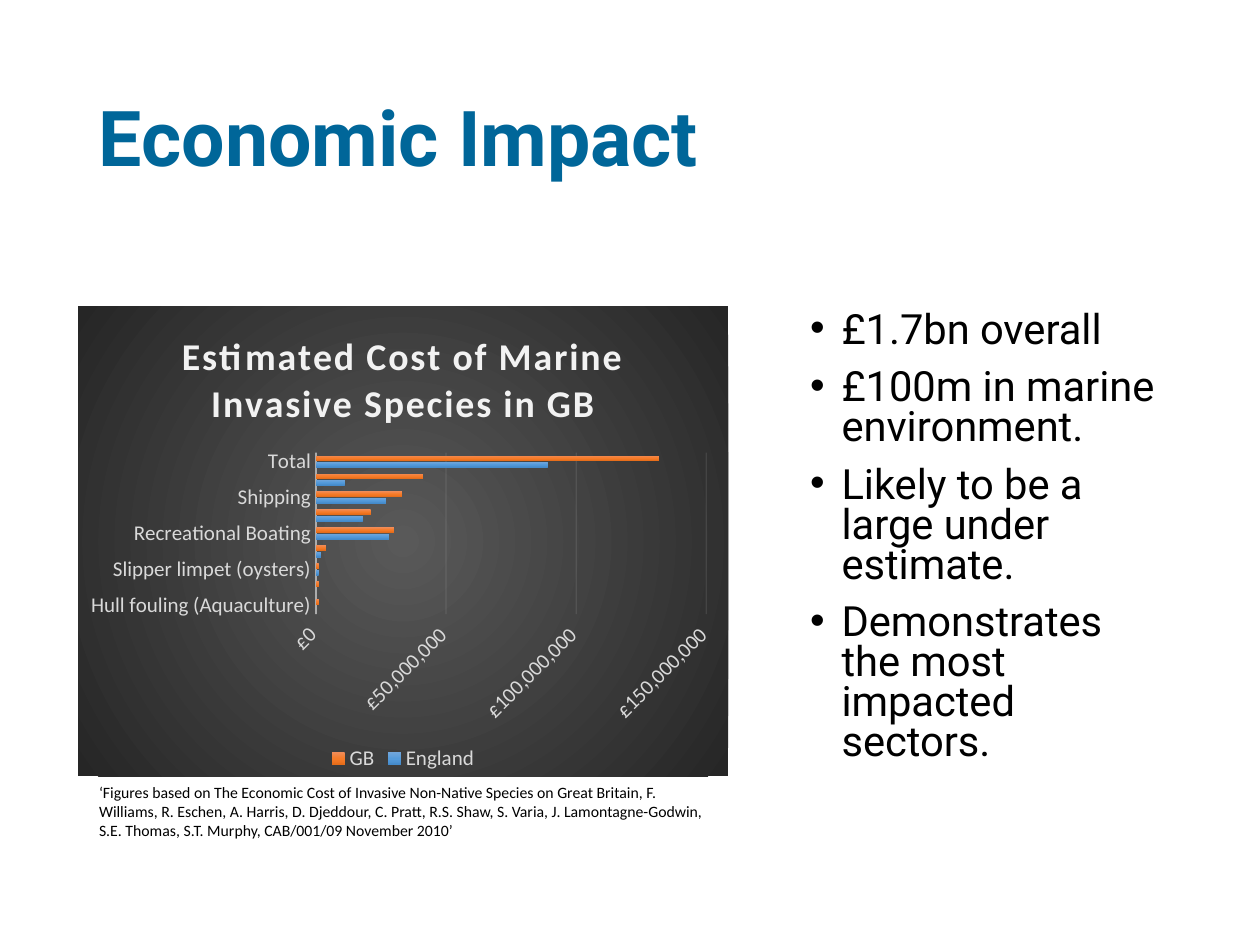
"""Build the slide on the economic impact of marine invasive species."""
import dataclasses

import lxml.etree
import pptx
import pptx.chart.data
import pptx.dml.color
import pptx.enum.chart
import pptx.enum.text
import pptx.oxml
import pptx.oxml.ns
import pptx.util

Pt = pptx.util.Pt
Anchor = pptx.enum.text.MSO_ANCHOR
qn = pptx.oxml.ns.qn


@dataclasses.dataclass(frozen=True)
class Theme:
    heading_font: str = "Roboto"
    chart_font: str = "Calibri"
    blue: str = "006699"
    black: str = "000000"
    pale: str = "F2F2F2"
    label: str = "D9D9D9"
    panel: tuple = ((0, "595959"), (100, "262626"))
    bars: tuple = (
        ((0, "71A6DB"), (50, "559BDB"), (100, "448ACA")),
        ((0, "F18C57"), (50, "F67B28"), (100, "E56C19")),
    )
    title_size: float = 44
    body_size: float = 23.8
    chart_title_size: float = 21.6
    label_size: float = 12
    note_size: float = 9


class SlideBuilder:
    def __init__(self, page, theme):
        self.page = page
        self.theme = theme

    def style(self, font, name, size, color, bold=False):
        font.name = name
        font.size = Pt(size)
        font.bold = bold
        font.color.rgb = pptx.dml.color.RGBColor.from_string(color)

    def text(self, place, lines, name, size, color, bold=False, anchor=Anchor.TOP,
             line_spacing=1.0, space_before=0, bullet=None, grow=False):
        box = self.page.shapes.add_textbox(*map(Pt, place))
        frame = box.text_frame
        frame.word_wrap = True
        frame.vertical_anchor = anchor
        if grow:
            frame.auto_size = pptx.enum.text.MSO_AUTO_SIZE.SHAPE_TO_FIT_TEXT
        for index, line in enumerate(lines):
            para = frame.paragraphs[0] if index == 0 else frame.add_paragraph()
            if bullet:
                self.bullet(para, bullet)
            para.line_spacing = line_spacing
            para.space_before = Pt(space_before if index else 0)
            span = para.add_run()
            span.text = line
            self.style(span.font, name, size, color, bold)

    def bullet(self, para, mark):
        properties = para._p.get_or_add_pPr()
        properties.set("marL", str(Pt(18)))
        properties.set("indent", str(-Pt(18)))
        font = lxml.etree.SubElement(properties, qn("a:buFont"))
        font.set("typeface", "Arial")
        lxml.etree.SubElement(properties, qn("a:buChar")).set("char", mark)

    def gradient(self, stops, direction):
        marks = "".join(
            f'<a:gs pos="{position * 1000}"><a:srgbClr val="{color}"/></a:gs>'
            for position, color in stops)
        namespace = pptx.oxml.ns.nsdecls("a")
        return pptx.oxml.parse_xml(
            f"<a:gradFill {namespace}><a:gsLst>{marks}</a:gsLst>{direction}</a:gradFill>")

    def line(self, line, width, opacity):
        line.width = Pt(width)
        line.color.rgb = pptx.dml.color.RGBColor.from_string(self.theme.pale)
        color = line._ln.find(".//" + qn("a:srgbClr"))
        lxml.etree.SubElement(color, qn("a:alpha")).set("val", str(opacity * 1000))

    def axis(self, axis):
        axis.major_tick_mark = axis.minor_tick_mark = pptx.enum.chart.XL_TICK_MARK.NONE
        self.label(axis.tick_labels.font)

    def label(self, font):
        self.style(font, self.theme.chart_font, self.theme.label_size, self.theme.label)

    def bar_chart(self, place, title, categories, series, number_format, maximum, step):
        theme = self.theme
        data = pptx.chart.data.CategoryChartData(number_format=number_format)
        data.categories = categories
        for name, values in series.items():
            data.add_series(name, values)
        chart = self.page.shapes.add_chart(
            pptx.enum.chart.XL_CHART_TYPE.BAR_CLUSTERED, *map(Pt, place), data).chart
        self.label(chart.font)

        chart.has_title = True
        span = chart.chart_title.text_frame.paragraphs[0].add_run()
        span.text = title
        self.style(span.font, theme.chart_font, theme.chart_title_size, theme.pale, True)
        span._r.get_or_add_rPr().set("spc", "100")
        chart.chart_title.include_in_layout = False

        chart.has_legend = True
        chart.legend.position = pptx.enum.chart.XL_LEGEND_POSITION.BOTTOM
        chart.legend.include_in_layout = False
        self.label(chart.legend.font)

        self.axis(chart.category_axis)
        self.line(chart.category_axis.format.line, 1, 54)
        amounts = chart.value_axis
        self.axis(amounts)
        amounts.minimum_scale, amounts.maximum_scale, amounts.major_unit = 0, maximum, step
        amounts.format.line.fill.background()
        self.line(amounts.major_gridlines.format.line, 0.75, 10)
        amounts.tick_labels.number_format = number_format
        amounts.tick_labels.number_format_is_linked = False
        body = amounts._element.find(qn("c:txPr")).find(qn("a:bodyPr"))
        body.set("rot", "-2700000")
        body.set("vert", "horz")

        plot = chart.plots[0]
        plot.gap_width, plot.overlap, plot.vary_by_categories = 115, -20, False
        for bars, stops in zip(plot.series, theme.bars):
            bars.invert_if_negative = False
            bars._element.get_or_add_spPr().append(
                self.gradient(stops, '<a:lin ang="5400000" scaled="0"/>'))

        panel = pptx.oxml.parse_xml(f"<c:spPr {pptx.oxml.ns.nsdecls('c', 'a')}/>")
        panel.append(self.gradient(
            theme.panel,
            '<a:path path="circle"><a:fillToRect l="50000" t="50000" r="50000" b="50000"/></a:path>'))
        outline = lxml.etree.SubElement(panel, qn("a:ln"))
        lxml.etree.SubElement(outline, qn("a:noFill"))
        chart._chartSpace.find(qn("c:chart")).addnext(panel)


def main():
    theme = Theme()
    deck = pptx.Presentation()
    deck.slide_width, deck.slide_height = Pt(720), Pt(540)
    builder = SlideBuilder(deck.slides.add_slide(deck.slide_layouts[6]), theme)

    builder.text((49.5, 28.8, 621, 104.4), ["Economic Impact"], theme.heading_font,
                 theme.title_size, theme.blue, bold=True, anchor=Anchor.MIDDLE,
                 line_spacing=0.9)
    builder.text((455.8, 175, 214.6, 268.6),
                 ["£1.7bn overall", "£100m in marine environment.",
                  "Likely to be a large under estimate.",
                  "Demonstrates the most impacted sectors."],
                 theme.heading_font, theme.body_size, theme.black,
                 line_spacing=0.8, space_before=10, bullet="•")

    million = 1_000_000
    costs = {
        "England": (0, 0, 1, 2, 28, 18, 27, 11, 89),
        "GB": (1, 1, 1, 4, 30, 21, 33, 41, 132),
    }
    builder.bar_chart(
        (44.6, 175, 371.5, 268.6), "Estimated Cost of Marine Invasive Species in GB",
        ["Hull fouling (Aquaculture)", "Fouling (shellfish)", "Slipper limpet (oysters)",
         "Slipper limpet (scallops)", "Recreational Boating", "Hull Fouling (vessels)",
         "Shipping", "Biodiversity", "Total"],
        {name: [value * million for value in values] for name, values in costs.items()},
        '"£"#,##0_);[Red]\\("£"#,##0\\)', 150 * million, 50 * million)

    builder.text((49.5, 443.6, 366.5, 40.3),
                 ["‘Figures based on The Economic Cost of Invasive Non-Native Species on "
                  "Great Britain, F. Williams, R. Eschen, A. Harris, D. Djeddour, C. Pratt, "
                  "R.S. Shaw, S. Varia, J. Lamontagne-Godwin, S.E. Thomas, S.T. Murphy, "
                  "CAB/001/09 November 2010’"],
                 theme.chart_font, theme.note_size, theme.black, grow=True)
    deck.save("out.pptx")


if __name__ == "__main__":
    main()
